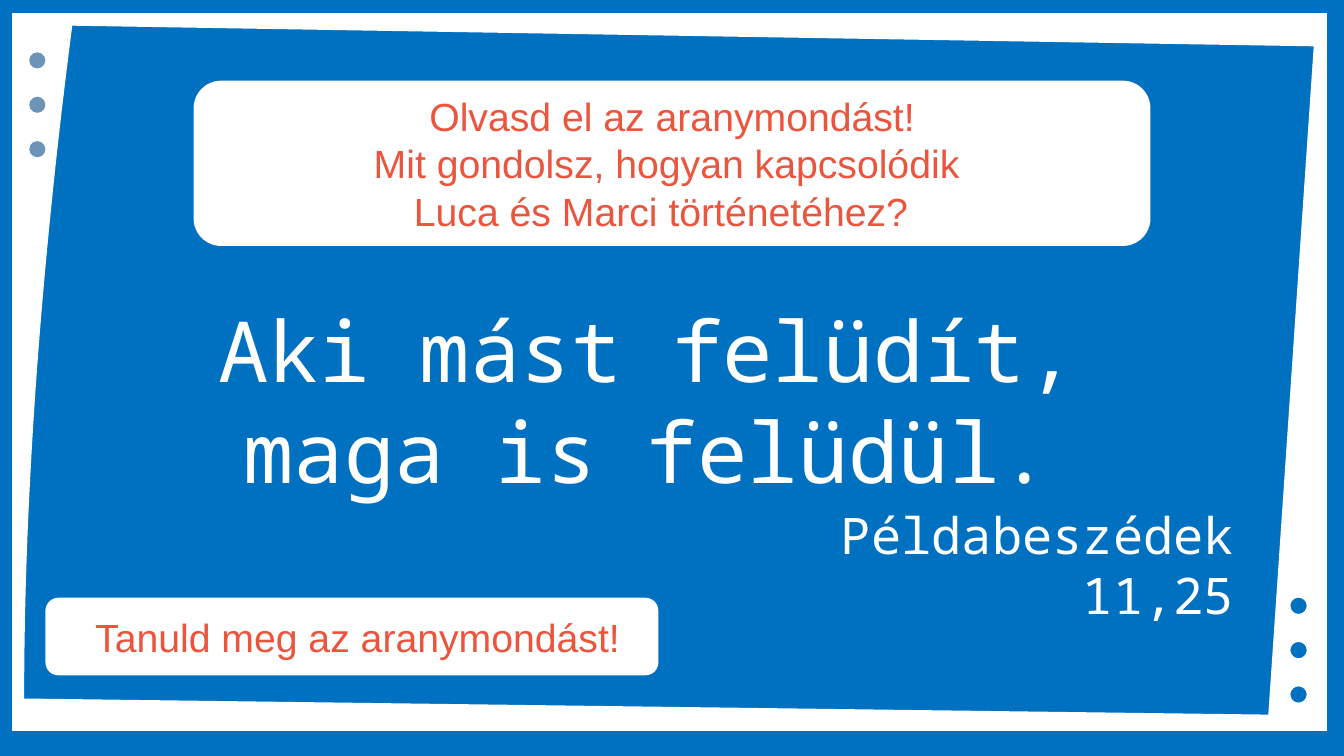
from math import cos, pi, sin

from pptx import Presentation
from pptx.dml.color import RGBColor as Rgb
from pptx.enum.shapes import MSO_SHAPE as Shape
from pptx.enum.text import MSO_ANCHOR as Anchor, MSO_AUTO_SIZE as Fit, PP_ALIGN as Align
from pptx.util import Inches, Pt

COLORS = {"blue": "0070C0", "white": "FFFFFF", "coral": "EB553E", "steel": "6D94B8"}
TASK = {"name": "Arial", "size": Pt(28), "color": "coral"}
VERSE = {"name": "Noto Sans Mono", "size": Pt(60), "color": "white"}
SOURCE = {**VERSE, "size": Pt(36)}


class Deck:
    """Draws on one slide; lengths are percent shares of its width and height."""

    def __init__(self, wide, high):
        self.prs = Presentation()
        self.prs.slide_width, self.prs.slide_height = Inches(wide), Inches(high)
        self.slide = self.prs.slides.add_slide(self.prs.slide_layouts[5])
        self.shapes = self.slide.shapes
        self.paint(self.slide.background, "blue")

    def spot(self, x, y):
        return round(self.prs.slide_width * x / 100), round(self.prs.slide_height * y / 100)

    def area(self, x, y, w, h):
        return self.spot(x, y) + self.spot(w, h)

    def paint(self, part, color):
        part.fill.solid()
        part.fill.fore_color.rgb = Rgb.from_string(COLORS[color])

    def shape(self, kind, box, color):
        form = self.shapes.add_shape(kind, *self.area(*box))
        return self.plain(form, color)

    def plain(self, form, color):
        self.paint(form, color)
        form.line.fill.background()
        form.shadow.inherit = False
        return form

    def outline(self, rings, color):
        rings = [[self.spot(*dot) for dot in ring] for ring in rings]
        pen = self.shapes.build_freeform(*rings[0][0], scale=1.0)
        for i, ring in enumerate(rings):
            if i:
                pen.move_to(*ring[0])
            pen.add_line_segments(ring[1:], close=True)
        return self.plain(pen.convert_to_shape(), color)

    def words(self, form, lines, style, align=Align.CENTER, anchor=Anchor.TOP):
        """Each line is its text and its extra margins in inches."""
        frame = form.text_frame
        setup = {"word_wrap": True, "auto_size": Fit.NONE, "vertical_anchor": anchor,
                 "margin_left": Inches(0.1), "margin_right": Inches(0.1),
                 "margin_top": Inches(0.05), "margin_bottom": Inches(0.05)}
        for key, value in setup.items():
            setattr(frame, key, value)
        for i, (text, gaps) in enumerate(lines):
            para = frame.add_paragraph() if i else frame.paragraphs[0]
            para.alignment = align
            for side, gap in gaps.items():
                para._p.get_or_add_pPr().set(side, str(Inches(gap)))
            run = para.add_run()
            run.text = text
            for key in ("name", "size"):
                setattr(run.font, key, style[key])
            run.font.color.rgb = Rgb.from_string(COLORS[style["color"]])

    def panel(self, box, lines):
        form = self.shape(Shape.ROUNDED_RECTANGLE, box, "white")
        self.words(form, lines, TASK, anchor=Anchor.MIDDLE)

    def title(self, box, lines, style):
        form = self.shapes.title
        form.left, form.top, form.width, form.height = self.area(*box)
        self.words(form, lines, style)

    def note(self, box, lines, style, align):
        self.words(self.shapes.add_textbox(*self.area(*box)), lines, style, align)


DOT_W, DOT_H, STEP = 1.2, 2.13, 5.87


def circle(x, y, count=32):
    turns = [-2 * pi * i / count for i in range(count)]
    return [(x + DOT_W / 2 * cos(t), y + DOT_H / 2 * sin(t)) for t in turns]


def curve(a, b, c, d, count=24):
    for i in range(count + 1):
        t = i / count
        u = 1 - t
        yield tuple(u**3 * p + 3 * u * u * t * q + 3 * u * t * t * r + t**3 * s
                    for p, q, r, s in zip(a, b, c, d))


def main():
    deck = Deck(13.33, 7.5)

    # Task at the top
    deck.panel((14.4, 10.67, 71.2, 21.87), [
        ("Olvasd el az aranymondást!", {}),
        ("Mit gondolsz, hogyan kapcsolódik", {"marR": 0.11}),
        ("Luca és Marci történetéhez?", {"marR": 0.22})])

    # White frame with a slanted opening and three holes
    border = [(0.9, 1.73), (98.72, 1.73), (98.72, 96.67), (0.9, 96.67)]
    sheet = [*curve((5.38, 3.4), (3.23, 32.8), (1.8, 63.87), (1.8, 92.4)),
             (94.37, 94.53), (97.75, 6.13)]
    holes = [circle(96.62, 80.13 + STEP * i) for i in range(3)]
    deck.outline([border, sheet, *holes], "white")

    # Dots on the left
    for i in range(3):
        deck.shape(Shape.OVAL, (2.18, 6.93 + STEP * i, DOT_W, DOT_H), "steel")

    # Verse and its source
    deck.title((4.35, 38.8, 91.3, 28.27), [
        ("Aki mást felüdít,", {"marR": 0.5}), ("maga is felüdül.", {})], VERSE)
    deck.note((55.14, 66, 37.43, 17.47), [("Példabeszédek 11,25", {})], SOURCE, Align.RIGHT)

    # Task at the bottom
    deck.panel((3.38, 79.07, 45.61, 10.27), [
        ("Tanuld meg az aranymondást!", {"marL": 0.11})])

    deck.prs.save("out.pptx")


if __name__ == "__main__":
    main()
